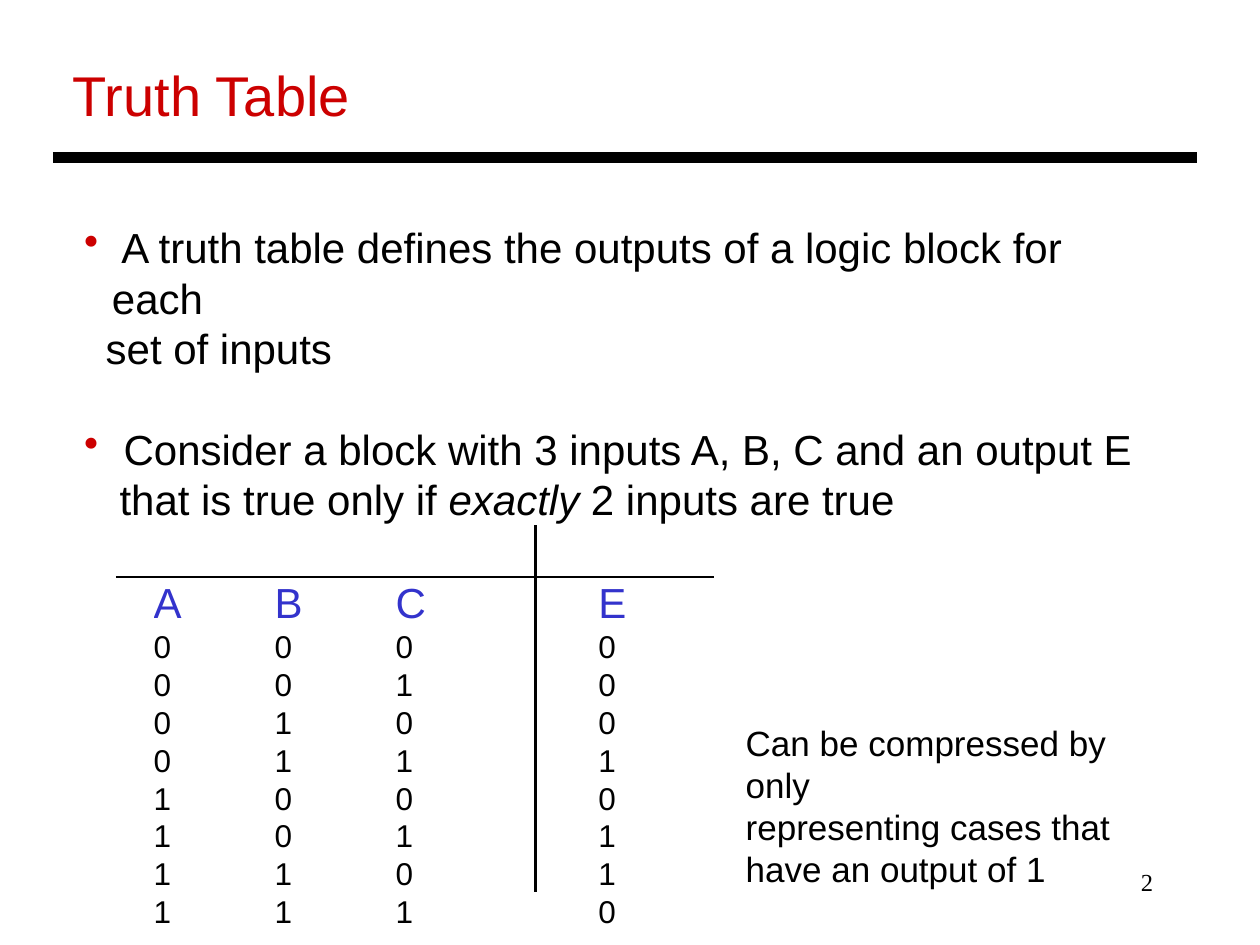
from itertools import product
from lxml.etree import SubElement as Sub
from pptx import Presentation
from pptx.dml.color import RGBColor as Rgb
from pptx.enum.shapes import MSO_CONNECTOR as Link
from pptx.enum.text import PP_ALIGN as Al
from pptx.oxml.ns import qn
from pptx.util import Inches, Pt

HUES = {"ink": "000000", "red": "CC0000", "blue": "3333CC"}

TITLE = "Truth Table"
PAGE = "2"
BODY = [
    {"bits": [" A truth table defines the outputs of a logic block for each"],
     "left": 0.22, "mark": True},
    {"bits": ["set of inputs"], "left": 0.17},
    {"bits": [" Consider a block with 3 inputs A, B, C and an output E"],
     "left": 0.22, "mark": True, "gap": 28.8},
    {"bits": ["that is true only if ", "*exactly", " 2 inputs are true"],
     "left": 0.28},
]
NOTE = [
    {"bits": ["Can be compressed by only"]},
    {"bits": ["representing cases that"]},
    {"bits": ["have an output of 1"]},
]
HEAD = ["A", "B", "C", "E"]
CASES = [[*ins, int(sum(ins) == 2)] for ins in product((0, 1), repeat=3)]
COLS = [0.96, 0.96, 1.61, 0.9]
RULES = [
    ((0.42, 1.25), (9.5, 1.25), 6),
    ((0.92, 4.58), (5.67, 4.58), 1),
    ((4.25, 4.17), (4.25, 7.08), 2.25),
]


def style(obj, vals):
    for key, val in vals.items():
        setattr(obj, key, val)


def write(par, bits, size, hue="ink", face="Arial", side=Al.LEFT, gap=0):
    style(par, {"alignment": side, "line_spacing": Pt(size * 1.2),
                "space_before": Pt(gap)})
    for bit in bits:
        run = par.add_run()
        run.text = bit.lstrip("*")
        style(run.font, {"name": face, "size": Pt(size),
                         "italic": bit.startswith("*")})
        run.font.color.rgb = Rgb.from_string(HUES[hue])


def indent(par, left, mark):
    props = par._p.get_or_add_pPr()
    props.set("marL", str(Inches(left)))
    props.set("indent", str(-Inches(left) if mark else 0))
    if mark:
        tint = Sub(Sub(props, qn("a:buClr")), qn("a:srgbClr"))
        tint.set("val", HUES["red"])
        Sub(props, qn("a:buChar")).set("char", "•")


def add_text(slide, box, lines, size, **look):
    frame = slide.shapes.add_textbox(*map(Inches, box)).text_frame
    frame.word_wrap = True
    for num, line in enumerate(lines):
        par = frame.add_paragraph() if num else frame.paragraphs[0]
        write(par, line["bits"], size, gap=line.get("gap", 0), **look)
        indent(par, line.get("left", 0), line.get("mark", False))


def add_grid(slide, left, top):
    rows = [HEAD, *CASES]
    tall = [0.4] + [0.3] * len(CASES)
    box = map(Inches, (left, top, sum(COLS), sum(tall)))
    grid = slide.shapes.add_table(len(rows), len(COLS), *box).table
    style(grid, {"first_row": False, "horz_banding": False})
    for col, wide in zip(grid.columns, COLS):
        col.width = Inches(wide)
    for num, (row, vals) in enumerate(zip(grid.rows, rows)):
        row.height = Inches(tall[num])
        size, hue = (18, "ink") if num else (24, "blue")
        for cell, val in zip(row.cells, vals):
            style(cell, {"margin_left": 0, "margin_right": 0,
                         "margin_top": 0, "margin_bottom": 0})
            cell.fill.background()
            write(cell.text_frame.paragraphs[0], [str(val)], size, hue)


def add_rule(slide, start, end, wide):
    rule = slide.shapes.add_connector(
        Link.STRAIGHT, *map(Inches, start + end))
    rule.line.width = Pt(wide)
    rule.line.color.rgb = Rgb.from_string(HUES["ink"])
    Sub(rule._element.spPr, qn("a:effectLst"))


def main():
    deck = Presentation()
    style(deck, {"slide_width": Inches(10), "slide_height": Inches(7.5)})
    slide = deck.slides.add_slide(deck.slide_layouts[6])
    add_text(slide, (7.17, 6.83, 2.08, 0.5), [{"bits": [PAGE]}], 14,
             face="Times New Roman", side=Al.RIGHT)
    add_text(slide, (0.48, 0.43, 2.6, 0.63), [{"bits": [TITLE]}], 32,
             hue="red")
    add_text(slide, (0.57, 1.71, 8.71, 2.5), BODY, 24)
    add_grid(slide, 1.22, 4.58)
    for rule in RULES:
        add_rule(slide, *rule)
    add_text(slide, (5.82, 5.68, 3.64, 1.1), NOTE, 20)
    deck.save("out.pptx")


if __name__ == "__main__":
    main()
